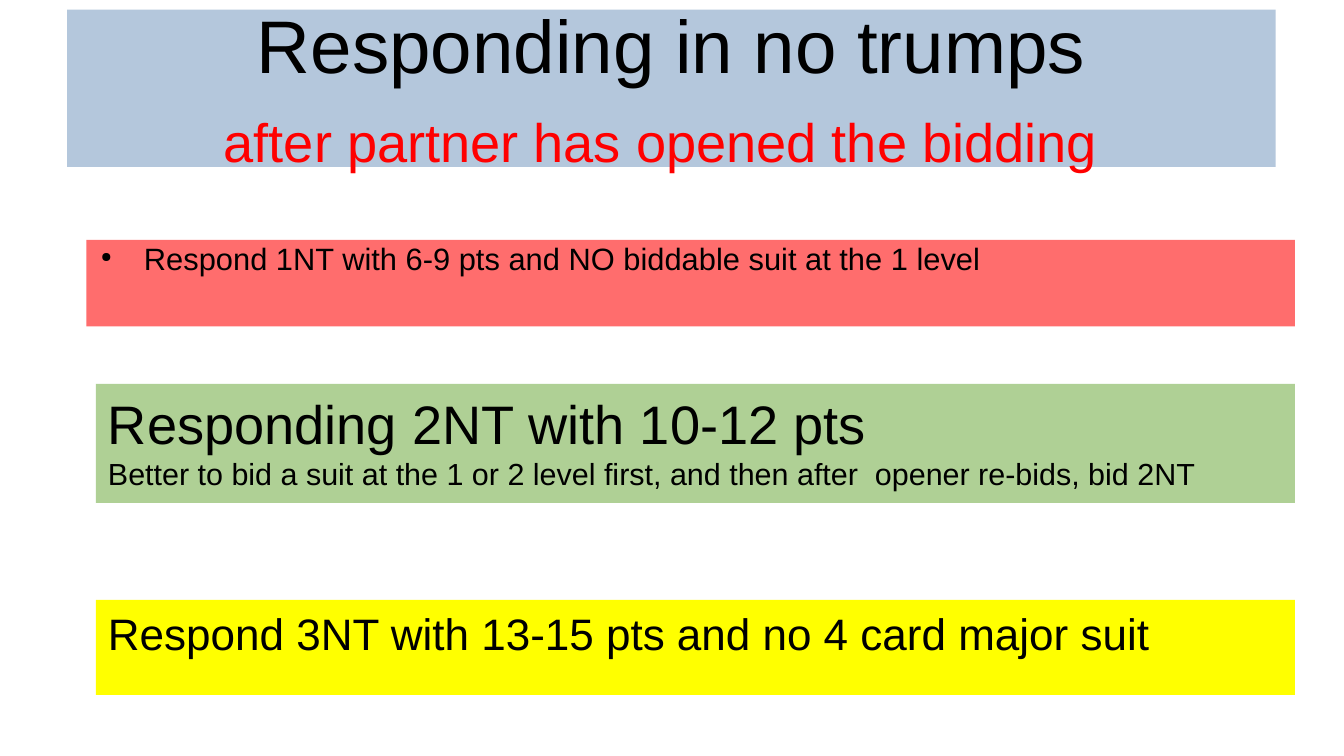
from lxml.etree import SubElement
from pptx import Presentation
from pptx.dml.color import RGBColor
from pptx.enum.shapes import MSO_SHAPE
from pptx.enum.text import MSO_ANCHOR, PP_ALIGN
from pptx.oxml.ns import qn
from pptx.util import Cm, Pt


def color(hex_code):
    return RGBColor.from_string(hex_code)


def add_band(left, top, width, height, fill, inset_x, inset_y, lines):
    band = slide.shapes.add_shape(
        MSO_SHAPE.RECTANGLE, Cm(left), Cm(top), Cm(width), Cm(height))
    band.shadow.inherit = False
    band.fill.solid()
    band.fill.fore_color.rgb = color(fill)
    band.line.fill.background()
    frame = band.text_frame
    frame.word_wrap = True
    frame.vertical_anchor = MSO_ANCHOR.TOP
    frame.margin_left = frame.margin_right = Cm(inset_x)
    frame.margin_top = frame.margin_bottom = Cm(inset_y)
    for index, (text, size) in enumerate(lines):
        paragraph = frame.paragraphs[0] if index == 0 else frame.add_paragraph()
        paragraph.text = text
        paragraph.alignment = PP_ALIGN.LEFT
        paragraph.font.name = "Arial"
        paragraph.font.size = Pt(size)
        paragraph.font.color.rgb = color("000000")
    return frame


presentation = Presentation()
presentation.slide_width = Cm(28)
presentation.slide_height = Cm(15.75)
slide = presentation.slides.add_slide(presentation.slide_layouts[6])

title = add_band(1.4, 0.2, 25.18, 3.28, "B4C7DC", 0, 0, [])
title.vertical_anchor = MSO_ANCHOR.MIDDLE
heading = title.paragraphs[0]
heading.alignment = PP_ALIGN.CENTER
for text, size, ink in [
    ("Responding in no trumps", 44, "000000"),
    ("after partner has opened the bidding", 32, "FF0000"),
    (" ", 44, "FF0000"),
]:
    run = heading.add_run()
    run.text = text
    run.font.name = "Arial"
    run.font.size = Pt(size)
    run.font.color.rgb = color(ink)
    if ink == "000000":
        heading.add_line_break()

one_notrump = add_band(1.8, 5, 25.18, 1.8, "FF6D6D", 0, 0, [])
response = one_notrump.paragraphs[0]
response.text = "Respond 1NT with 6-9 pts and NO biddable suit at the 1 level"
response.alignment = PP_ALIGN.LEFT
properties = response._p.get_or_add_pPr()
properties.set("marL", str(Cm(1.2)))
properties.set("indent", str(-Cm(0.9)))
bullet_color = SubElement(properties, qn("a:buClr"))
SubElement(bullet_color, qn("a:srgbClr"), val="000000")
SubElement(properties, qn("a:buSzPct"), val="45000")
SubElement(properties, qn("a:buChar"), char="●")
response.font.name = "Arial"
response.font.size = Pt(18.2)
response.font.color.rgb = color("000000")

add_band(2, 8, 24.98, 2.48, "AFD095", 0.25, 0.13, [
    ("Responding 2NT with 10-12 pts", 32),
    ("Better to bid a suit at the 1 or 2 level first, and then after  opener re-bids, bid 2NT", 18),
])
add_band(2, 12.5, 24.98, 1.98, "FFFF00", 0.25, 0.13, [
    ("Respond 3NT with 13-15 pts and no 4 card major suit", 26),
])

presentation.save("out.pptx")
